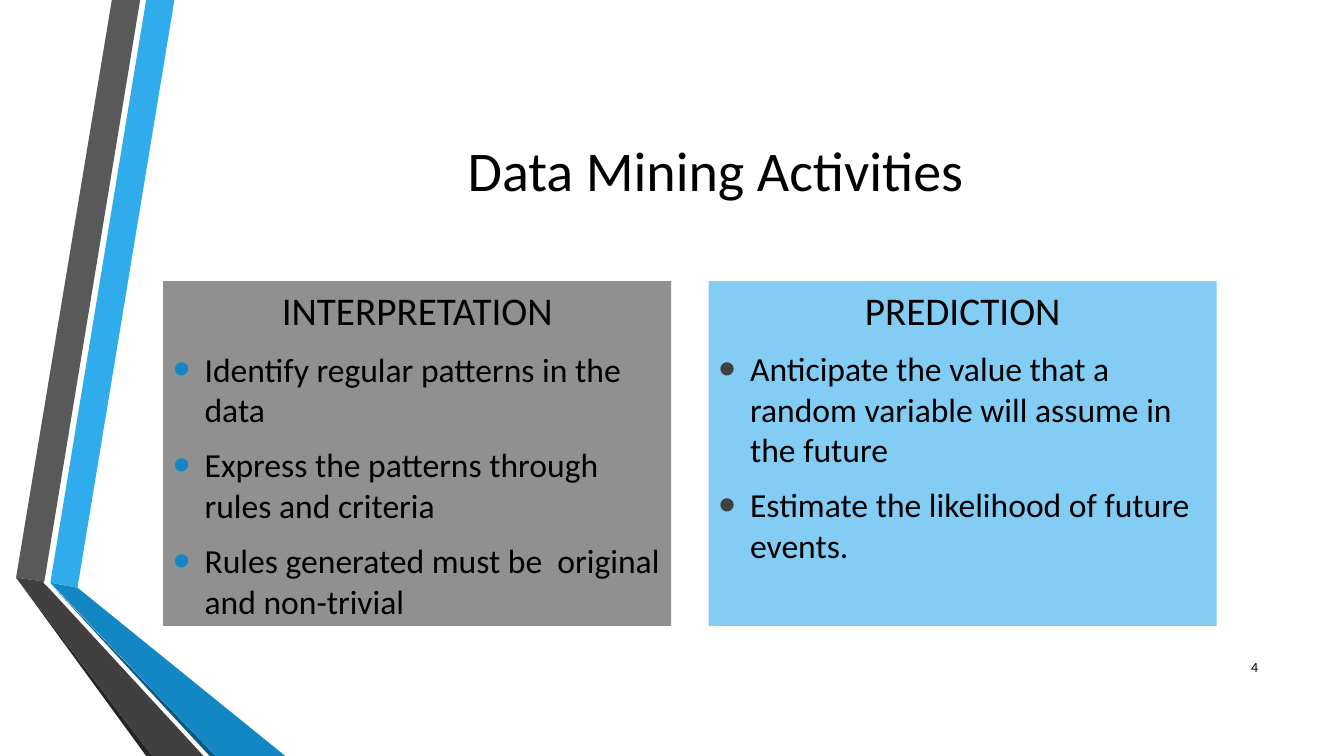
from dataclasses import dataclass

from lxml.etree import SubElement
from pptx import Presentation
from pptx.dml.color import RGBColor
from pptx.enum.shapes import MSO_SHAPE
from pptx.enum.text import MSO_ANCHOR, PP_ALIGN
from pptx.oxml.ns import qn
from pptx.shapes.autoshape import Shape
from pptx.slide import Slide
from pptx.text.text import _Paragraph
from pptx.util import Pt

FONT = "Calibri"
BLACK = "000000"
LEFT, TOP, WIDE, HIGH = 116.6, 200.9, 362.9, 246.2
STEP = 389.6
INDENT = 22.5


@dataclass
class Band:
    fill: str
    points: list[tuple[float, float]]


@dataclass
class Panel:
    head: str
    items: list[str]
    fill: str
    dot: str
    foot: float  # bottom inset


@dataclass
class Label:
    text: str
    box: tuple[float, float, float, float]
    size: float
    align: PP_ALIGN


BANDS = [
    Band("30ACEC", [(36, 416.2), (55.4, 419.8), (124.6, 0), (104.4, 0)]),
    Band("595959", [(100.1, 0), (79.9, 0), (11.5, 412.6), (31.7, 415.4)]),
    Band("262626", [(11.5, 412.6), (104.4, 540), (108.7, 540)]),
    Band("0C5A82", [(36, 416.9), (149.8, 540), (154.1, 540)]),
    Band("1287C3", [(36, 416.2), (154.1, 540), (203.8, 540), (55.4, 419.8)]),
    Band("404040", [(145.4, 540), (34.6, 419.8), (31, 416.2), (31.7, 415.4),
                    (11.5, 412.6), (108.7, 540)]),
]

PANELS = [
    Panel("INTERPRETATION",
          ["Identify regular patterns in the data",
           "Express the patterns through rules and criteria",
           "Rules generated must be  original and non-trivial"],
          "909090", "1287C3", 3.6),
    Panel("PREDICTION",
          ["Anticipate the value that a random variable will assume in the future",
           "Estimate the likelihood of future events."],
          "83CDF4", "404040", 43.7),
]

LABELS = [
    Label("Data Mining Activities", (LEFT, 51.8, 789.1, 138.2), 40, PP_ALIGN.CENTER),
    Label("4", (862.6, 462.2, 43.2, 28.8), 10, PP_ALIGN.RIGHT),
]


def color(code: str) -> RGBColor:
    return RGBColor.from_string(code)


def paint(shape: Shape, fill: str) -> None:
    """Give a shape a flat fill with no line or shadow."""
    shape.fill.solid()
    shape.fill.fore_color.rgb = color(fill)
    shape.line.fill.background()
    shape.shadow.inherit = False


def write(para: _Paragraph, text: str, size: float, **form: object) -> None:
    """Fill a paragraph and set its format values."""
    run = para.add_run()
    run.text = text
    for name, value in {"name": FONT, "size": Pt(size)}.items():
        setattr(run.font, name, value)
    run.font.color.rgb = color(BLACK)
    for name, value in form.items():
        setattr(para, name, value)


def bullet(para: _Paragraph, dot: str) -> None:
    props = para._p.get_or_add_pPr()
    props.set("marL", str(Pt(INDENT)))
    props.set("indent", str(-Pt(INDENT)))
    tint = SubElement(props, qn("a:buClr"))
    SubElement(tint, qn("a:srgbClr"), val=dot)
    SubElement(props, qn("a:buSzPct"), val="145000")
    SubElement(props, qn("a:buFont"), typeface="Arial")
    SubElement(props, qn("a:buChar"), char="•")


def add_band(slide: Slide, band: Band) -> None:
    first, *rest = [(Pt(x), Pt(y)) for x, y in band.points]
    path = slide.shapes.build_freeform(*first)
    path.add_line_segments(rest, close=True)
    paint(path.convert_to_shape(), band.fill)


def add_panel(slide: Slide, panel: Panel, left: float) -> None:
    shape = slide.shapes.add_shape(
        MSO_SHAPE.RECTANGLE, Pt(left), Pt(TOP), Pt(WIDE), Pt(HIGH))
    paint(shape, panel.fill)
    frame = shape.text_frame
    form = {"word_wrap": True, "vertical_anchor": MSO_ANCHOR.MIDDLE,
            "margin_bottom": Pt(panel.foot)}
    for name, value in form.items():
        setattr(frame, name, value)
    gaps = {"space_before": Pt(4.8), "space_after": Pt(6)}
    write(frame.paragraphs[0], panel.head, 28, alignment=PP_ALIGN.CENTER, **gaps)
    for item in panel.items:
        para = frame.add_paragraph()
        write(para, item, 24, alignment=PP_ALIGN.LEFT, **gaps)
        bullet(para, panel.dot)


def add_label(slide: Slide, label: Label) -> None:
    frame = slide.shapes.add_textbox(*map(Pt, label.box)).text_frame
    frame.word_wrap = True
    frame.vertical_anchor = MSO_ANCHOR.MIDDLE
    write(frame.paragraphs[0], label.text, label.size, alignment=label.align)


def main() -> None:
    deck = Presentation()
    deck.slide_width, deck.slide_height = Pt(960), Pt(540)
    slide = deck.slides.add_slide(deck.slide_layouts[6])
    for band in BANDS:
        add_band(slide, band)
    for col, panel in enumerate(PANELS):
        add_panel(slide, panel, LEFT + col * STEP)
    for label in LABELS:
        add_label(slide, label)
    deck.save("out.pptx")


if __name__ == "__main__":
    main()
